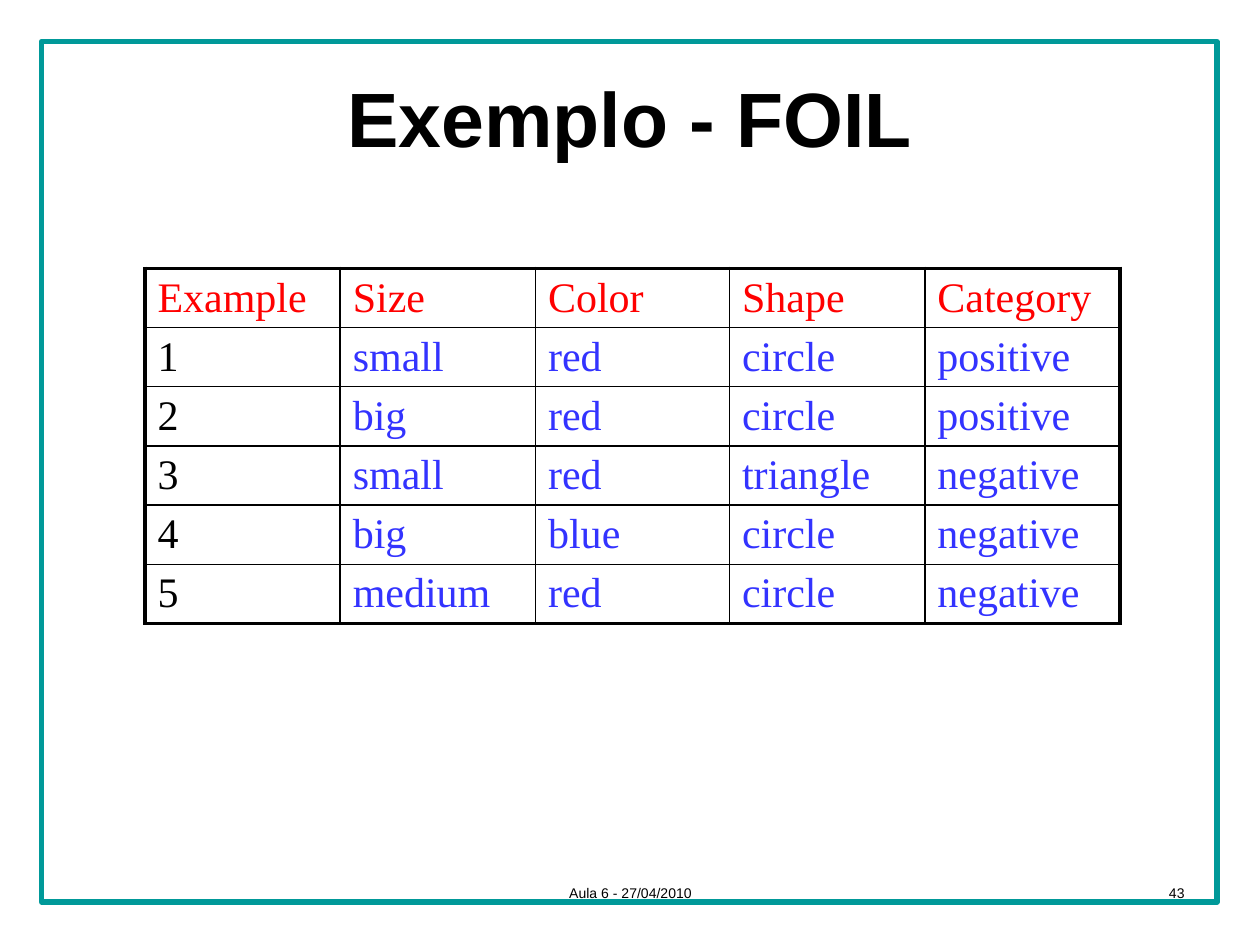
from dataclasses import dataclass

from lxml.etree import SubElement
from pptx import Presentation
from pptx.dml.color import RGBColor as RGB
from pptx.enum.shapes import MSO_SHAPE as Shape
from pptx.enum.text import MSO_ANCHOR as Anchor, PP_ALIGN as Align
from pptx.oxml import parse_xml
from pptx.oxml.ns import nsdecls, qn
from pptx.util import Inches, Pt

HUES = {"teal": "009999", "black": "000000", "red": "FF0000", "blue": "3333FF"}

HEAD = ("Example", "Size", "Color", "Shape", "Category")
ROWS = (
    ("1", "small", "red", "circle", "positive"),
    ("2", "big", "red", "circle", "positive"),
    ("3", "small", "red", "triangle", "negative"),
    ("4", "big", "blue", "circle", "negative"),
    ("5", "medium", "red", "circle", "negative"),
)
COLS = (1.55, 1.55, 1.54, 1.55, 1.55)
HIGH = 0.47
THIN, THICK = 1, 2.25


@dataclass
class Note:
    text: str
    left: float
    width: float
    align: Align


NOTES = (
    Note("Aula 6 - 27/04/2010", 3.42, 3.17, Align.CENTER),
    Note("43", 7.17, 2.33, Align.RIGHT),
)


def write(frame, text: str, *, size: float, font: str = "Arial",
          hue: str = "black", bold: bool = False, align=Align.LEFT) -> None:
    par = frame.paragraphs[0]
    par.alignment = align
    run = par.add_run()
    run.text = text
    run.font.size = Pt(size)
    run.font.name = font
    run.font.bold = bold
    run.font.color.rgb = RGB.from_string(HUES[hue])


def edge(cell, sides: dict[str, float]) -> None:
    """Draw the cell's borders; sides maps L, R, T, B to points."""
    props = cell._tc.get_or_add_tcPr()
    for spot, (side, width) in enumerate(sides.items()):
        line = parse_xml(f'<a:ln{side} {nsdecls("a")} w="{Pt(width)}"/>')
        fill = SubElement(line, qn("a:solidFill"))
        SubElement(fill, qn("a:srgbClr"), val=HUES["black"])
        props.insert(spot, line)


def add_frame(slide) -> None:
    box = slide.shapes.add_shape(Shape.RECTANGLE, Inches(0.33), Inches(0.33),
                                 Inches(9.33), Inches(6.83))
    box.shadow.inherit = False
    box.fill.background()
    box.line.color.rgb = RGB.from_string(HUES["teal"])
    box.line.width = Pt(3)
    slide.shapes.element.insert(2, box.element)  # behind the title


def add_title(slide, text: str) -> None:
    title = slide.shapes.title
    title.left, title.top = Inches(0.5), Inches(0.3)
    title.width, title.height = Inches(9), Inches(1.25)
    title.text_frame.vertical_anchor = Anchor.MIDDLE
    write(title.text_frame, text, size=44, bold=True, align=Align.CENTER)


def add_grid(slide) -> None:
    data = (HEAD, *ROWS)
    grid = slide.shapes.add_table(
        len(data), len(COLS), Inches(1.15), Inches(2.13),
        Inches(sum(COLS)), Inches(HIGH * len(data))).table
    grid.first_row = grid.horz_banding = False
    for col, width in zip(grid.columns, COLS):
        col.width = Inches(width)
    end, side = len(data) - 1, len(COLS) - 1
    for r, row in enumerate(data):
        for c, text in enumerate(row):
            cell = grid.cell(r, c)
            cell.margin_left = cell.margin_right = Inches(0.1)
            cell.margin_top, cell.margin_bottom = Inches(0.05), Inches(0.04)
            cell.fill.background()
            hue = "red" if r == 0 else "black" if c == 0 else "blue"
            write(cell.text_frame, text, size=24, font="Times New Roman",
                  hue=hue)
            outer = {"L": c == 0, "R": c == side, "T": r == 0, "B": r == end}
            edge(cell, {k: THICK if out else THIN for k, out in outer.items()})


def add_note(slide, note: Note) -> None:
    box = slide.shapes.add_textbox(Inches(note.left), Inches(6.83),
                                   Inches(note.width), Inches(0.52))
    frame = box.text_frame
    frame.word_wrap = True
    frame.vertical_anchor = Anchor.MIDDLE
    write(frame, note.text, size=8, align=note.align)


def main() -> None:
    deck = Presentation()
    deck.slide_width, deck.slide_height = Inches(10), Inches(7.5)
    slide = deck.slides.add_slide(deck.slide_layouts[5])
    add_frame(slide)
    add_title(slide, "Exemplo - FOIL")
    add_grid(slide)
    for note in NOTES:
        add_note(slide, note)
    deck.save("out.pptx")


if __name__ == "__main__":
    main()
